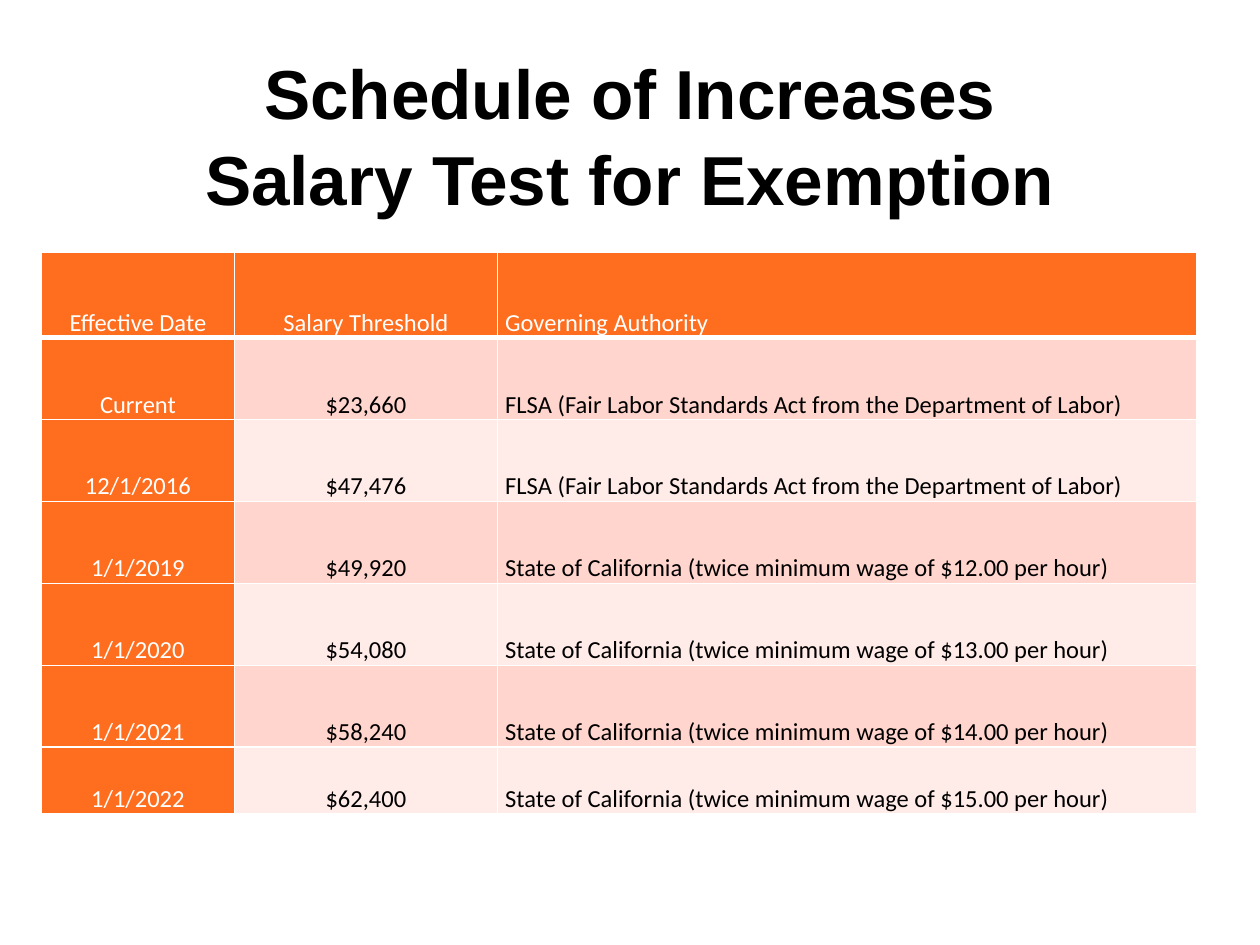
"""Build the slide with the salary test increase schedule."""
from typing import NamedTuple

from lxml import etree
from pptx import Presentation
from pptx.dml.color import RGBColor
from pptx.enum import text
from pptx.oxml import ns
from pptx.util import Inches, Pt

ORANGE = RGBColor(0xFF, 0x6E, 0x1E)
PINK = RGBColor(0xFF, 0xD5, 0xCD)
PALE_PINK = RGBColor(0xFF, 0xEB, 0xE8)
WHITE = RGBColor(0xFF, 0xFF, 0xFF)
BLACK = RGBColor(0, 0, 0)


class Increase(NamedTuple):
    date: str
    threshold: str
    authority: str


FLSA = "FLSA (Fair Labor Standards Act from the Department of Labor)"
STATE = "State of California (twice minimum wage of ${}.00 per hour)"
HEADER = Increase("Effective Date", "Salary Threshold", "Governing Authority")
INCREASES = [
    Increase("Current", "$23,660", FLSA),
    Increase("12/1/2016", "$47,476", FLSA),
    Increase("1/1/2019", "$49,920", STATE.format(12)),
    Increase("1/1/2020", "$54,080", STATE.format(13)),
    Increase("1/1/2021", "$58,240", STATE.format(14)),
    Increase("1/1/2022", "$62,400", STATE.format(15)),
]
COLUMN_WIDTHS = [1.53, 2.09, 5.55]
ROW_HEIGHTS = [0.68] + [0.65] * 5 + [0.53]


def add_title(s) -> None:
    sp = s.shapes.add_textbox(Inches(0.5), Inches(0.3), Inches(9), Inches(1.25))
    tf = sp.text_frame
    tf.word_wrap = True
    tf.margin_top = Inches(0.07)
    p = tf.paragraphs[0]
    p.text = "Schedule of Increases\vSalary Test for Exemption"
    p.alignment = text.PP_ALIGN.CENTER
    p.line_spacing = 1.04
    p.font.name, p.font.size, p.font.bold = "Arial", Pt(39.6), True
    p.font.color.rgb = BLACK


def set_borders(cell, bottom: float) -> None:
    tc_pr = cell._tc.get_or_add_tcPr()
    widths = {"a:lnL": 1, "a:lnR": 1, "a:lnT": 1, "a:lnB": bottom}
    for i, (tag, width) in enumerate(widths.items()):
        ln = etree.Element(ns.qn(tag), w=str(Pt(width)))
        fill = etree.SubElement(ln, ns.qn("a:solidFill"))
        etree.SubElement(fill, ns.qn("a:srgbClr"), val=str(WHITE))
        tc_pr.insert(i, ln)


def fill_cell(cell, value: str, row: int, column: int) -> None:
    heading = row == 0 or column == 0
    cell.fill.solid()
    cell.fill.fore_color.rgb = ORANGE if heading else PINK if row % 2 else PALE_PINK
    cell.vertical_anchor = text.MSO_ANCHOR.BOTTOM
    cell.margin_left = cell.margin_right = Inches(0.06)
    cell.margin_top = cell.margin_bottom = Inches(0)
    set_borders(cell, 3 if row == 0 else 1)
    p = cell.text_frame.paragraphs[0]
    p.text = value
    p.alignment = text.PP_ALIGN.LEFT if column == 2 else text.PP_ALIGN.CENTER
    p.line_spacing = 1.07
    p.font.name, p.font.size, p.font.bold = "Calibri", Pt(14), False
    p.font.color.rgb = WHITE if heading else BLACK


def add_schedule(s, rows: list[Increase]) -> None:
    table = s.shapes.add_table(
        len(rows), len(COLUMN_WIDTHS), Inches(0.33), Inches(2),
        Inches(sum(COLUMN_WIDTHS)), Inches(sum(ROW_HEIGHTS)),
    ).table
    for column, width in zip(table.columns, COLUMN_WIDTHS):
        column.width = Inches(width)
    for i, (increase, height) in enumerate(zip(rows, ROW_HEIGHTS)):
        table.rows[i].height = Inches(height)
        for j, value in enumerate(increase):
            fill_cell(table.cell(i, j), value, i, j)


def main() -> None:
    prs = Presentation()
    prs.slide_width, prs.slide_height = Inches(10), Inches(7.5)
    s = prs.slides.add_slide(prs.slide_layouts[6])
    add_title(s)
    add_schedule(s, [HEADER, *INCREASES])
    prs.save("out.pptx")


if __name__ == "__main__":
    main()
